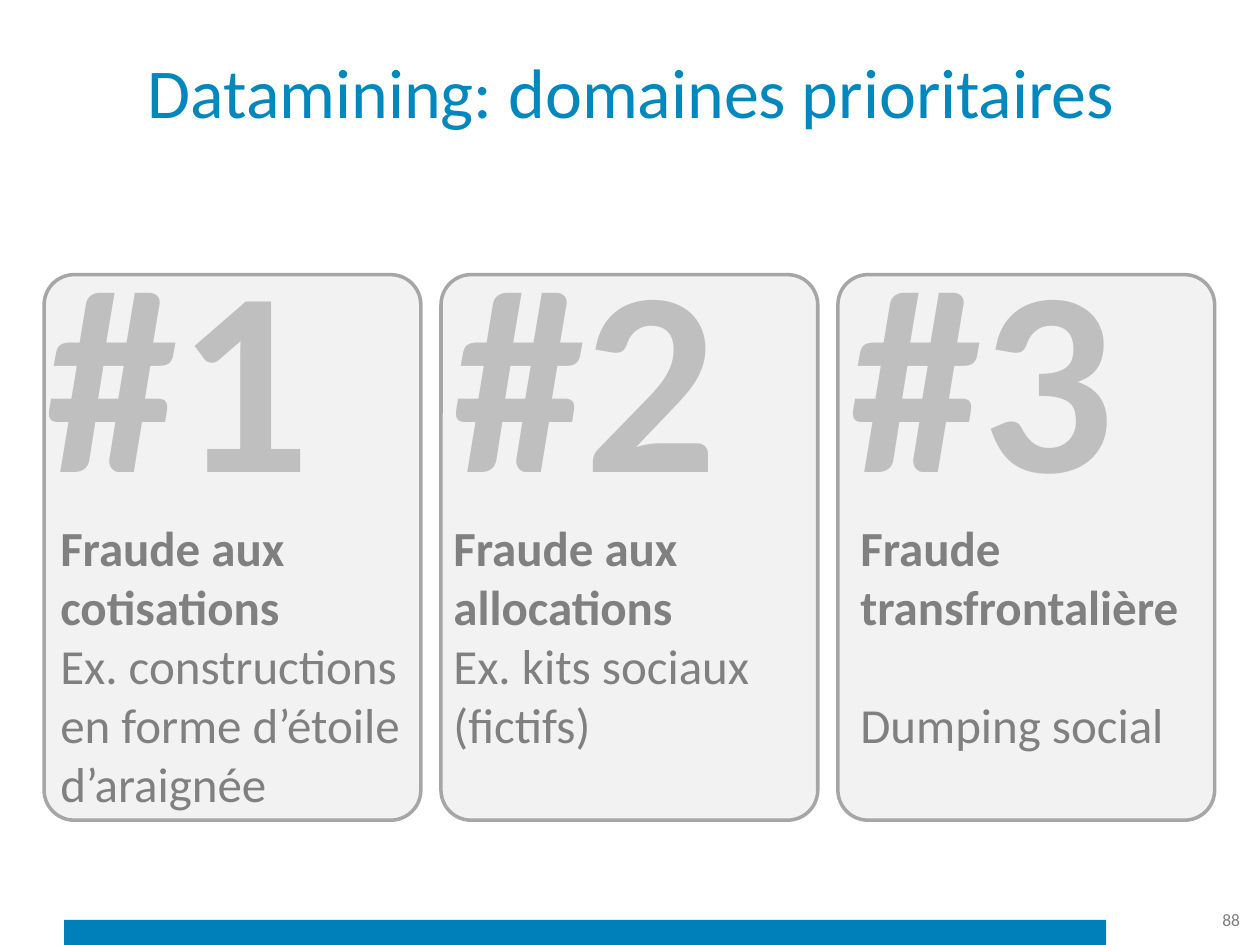
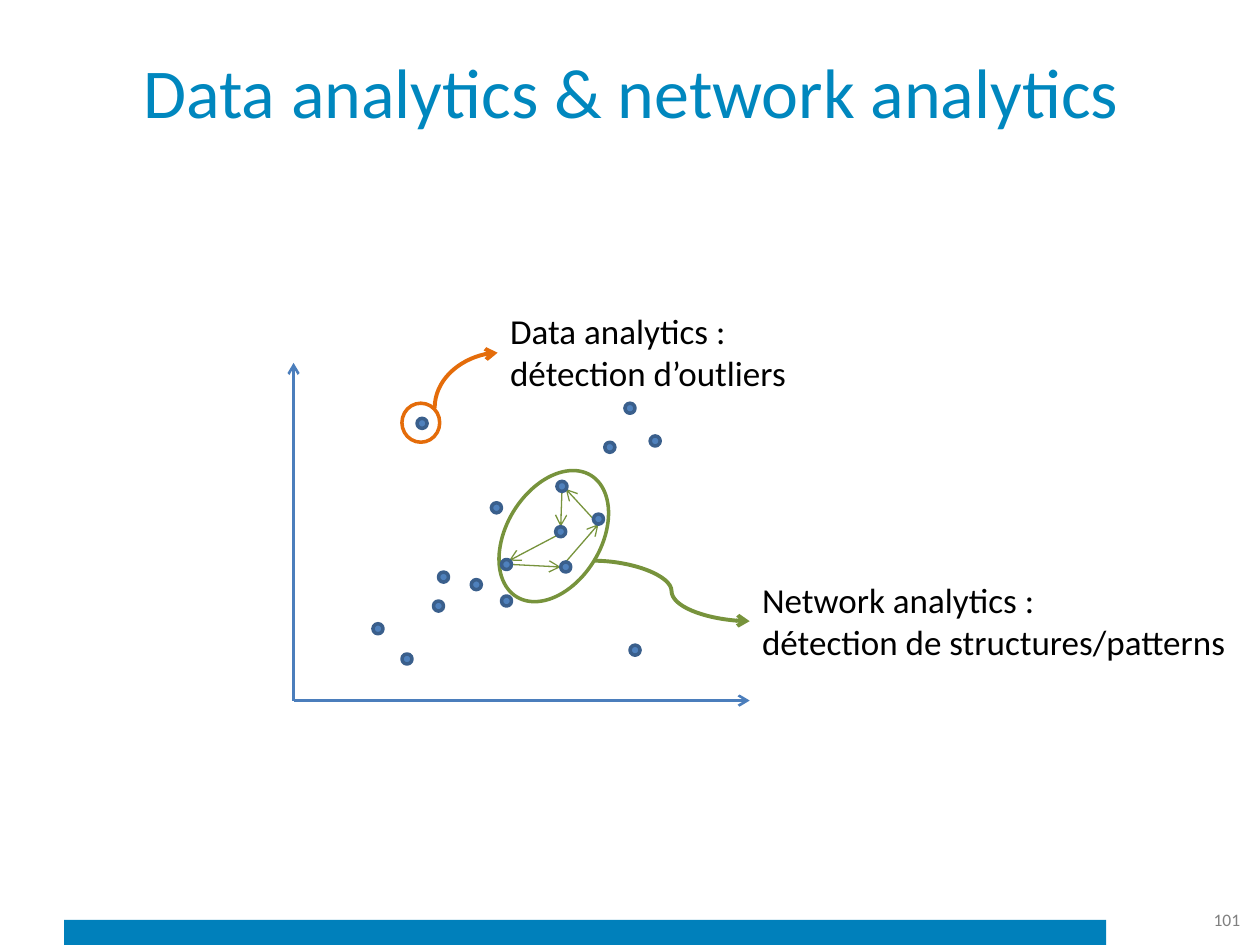
import pptx
import pptx.dml.color
import pptx.enum.shapes
import pptx.enum.text
import pptx.oxml
import pptx.oxml.ns
import pptx.util

Inches = pptx.util.Inches
Pt = pptx.util.Pt
Shape = pptx.enum.shapes.MSO_SHAPE
Connector = pptx.enum.shapes.MSO_CONNECTOR
Align = pptx.enum.text.PP_ALIGN
Anchor = pptx.enum.text.MSO_ANCHOR
AutoSize = pptx.enum.text.MSO_AUTO_SIZE

FONT = "Calibri"
BAND, TITLE, GREY = "0080BB", "0087BE", "808080"
CARD_FILL, CARD_LINE, NUMBER = "F2F2F2", "A6A6A6", "BFBFBF"
AXIS, DOT_FILL, DOT_LINE = "4B7EBC", "4F81BD", "3A5F8C"
ORANGE, GREEN, BLACK = "E46C0A", "77933C", "000000"


def color(value):
    """Turn a hex string into a colour."""
    return pptx.dml.color.RGBColor.from_string(value)


def write(frame, text, size=20, hue=BLACK, bold=False, align=Align.LEFT, before=0):
    """Append each line of text to the frame as a formatted paragraph."""
    for line in text.split("\n"):
        paragraph = frame.paragraphs[0] if not frame.text else frame.add_paragraph()
        paragraph.alignment = align
        if before:
            paragraph.space_before = Pt(before)
        run = paragraph.add_run()
        run.text = line
        run.font.name, run.font.size, run.font.bold = FONT, Pt(size), bold
        run.font.color.rgb = color(hue)


class Deck:
    """Hold the shared style and the slide being drawn."""

    def __init__(self):
        """Start an empty 4:3 presentation."""
        self.presentation = pptx.Presentation()
        self.presentation.slide_width = Inches(10)
        self.presentation.slide_height = Inches(7.5)
        self.slide = None

    def start(self, title, number):
        """Add a slide with its band, title and page number."""
        self.slide = self.presentation.slides.add_slide(self.presentation.slide_layouts[6])
        self.shape(Shape.RECTANGLE, 0.51, 7.3, 8.27, 0.2, fill=BAND)
        heading = self.box(0.51, 0.21, 9, 1.01, anchor=Anchor.MIDDLE)
        write(heading, title, size=40, hue=TITLE, align=Align.CENTER)
        page = self.box(9.12, 7.1, 0.82, 0.4, anchor=Anchor.MIDDLE)
        write(page, str(number), size=10, hue=GREY, align=Align.RIGHT)

    def box(self, left, top, width, height, wrap=True, anchor=Anchor.TOP):
        """Add a text box and return its text frame."""
        frame = self.slide.shapes.add_textbox(
            Inches(left), Inches(top), Inches(width), Inches(height)).text_frame
        frame.word_wrap = wrap
        frame.vertical_anchor = anchor
        frame.auto_size = AutoSize.NONE if wrap else AutoSize.SHAPE_TO_FIT_TEXT
        return frame

    def shape(self, kind, left, top, width, height, fill=None, line=None):
        """Add a preset shape with an optional fill and outline."""
        shape = self.slide.shapes.add_shape(
            kind, Inches(left), Inches(top), Inches(width), Inches(height))
        shape.shadow.inherit = False
        if fill:
            shape.fill.solid()
            shape.fill.fore_color.rgb = color(fill)
        else:
            shape.fill.background()
        if line:
            shape.line.color.rgb = color(line)
            shape.line.width = Pt(2)
        else:
            shape.line.fill.background()
        return shape

    def arrow(self, start, end, hue, width, kind=Connector.STRAIGHT):
        """Add a connector with an open arrowhead at its end."""
        arrow = self.slide.shapes.add_connector(
            kind, *(Inches(value) for value in (*start, *end)))
        arrow.line.color.rgb = color(hue)
        arrow.line.width = Pt(width)
        head = pptx.oxml.parse_xml(
            f'<a:tailEnd {pptx.oxml.ns.nsdecls("a")} type="arrow"/>')
        arrow.line._get_or_add_ln().append(head)
        arrow.element.spPr.append(
            pptx.oxml.parse_xml(f'<a:effectLst {pptx.oxml.ns.nsdecls("a")}/>'))
        return arrow

    def quarter_arrow(self, start, end, hue, width):
        """Add a curve that leaves upwards and arrives rightwards."""
        middle_x, middle_y = (start[0] + end[0]) / 2, (start[1] + end[1]) / 2
        half_run, half_rise = (end[0] - start[0]) / 2, (start[1] - end[1]) / 2
        arrow = self.arrow((middle_x + half_rise, middle_y + half_run),
                           (middle_x - half_rise, middle_y - half_run),
                           hue, width, Connector.CURVE)
        properties = arrow.element.spPr
        properties.find(pptx.oxml.ns.qn("a:prstGeom")).set("prst", "curvedConnector2")
        properties.find(pptx.oxml.ns.qn("a:xfrm")).set("rot", str(90 * 60000))


def draw_priorities(deck):
    """Draw the three priority domains as numbered cards."""
    deck.start("Datamining: domaines prioritaires", 88)
    domains = [
        (0.27, 0.38, 2.95, True, "Fraude aux\ncotisations",
         "Ex. constructions en forme d’étoile d’araignée", 0),
        (3.5, 3.5, 2.58, False, "Fraude aux\nallocations",
         "Ex. kits sociaux\n(fictifs)", 0),
        (6.65, 6.73, 2.92, True, "Fraude transfrontalière", "Dumping social", 34),
    ]
    for index, domain in enumerate(domains):
        number_left, text_left, text_width, wrap, name, example, gap = domain
        card = deck.shape(Shape.ROUNDED_RECTANGLE, 0.35 + 3.15 * index, 2.18, 2.99, 4.33,
                          fill=CARD_FILL, line=CARD_LINE)
        card.adjustments[0] = 0.08
        number = deck.box(number_left, 1.62, 2.32, 2.63, wrap=False)
        write(number, f"#{index + 1}", size=150, hue=NUMBER, bold=True)
        description = deck.box(text_left, 4.06, text_width, 2.46, wrap=wrap)
        write(description, name, size=28, hue=GREY, bold=True)
        write(description, example, size=28, hue=GREY, before=gap)


def draw_analytics(deck):
    """Draw the scatter with its outlier and its network."""
    deck.start("Data analytics & network analytics", 101)
    origin = (2.33, 5.56)
    for axis_end in [(2.33, 2.88), (5.95, 5.56)]:
        deck.arrow(origin, axis_end, AXIS, 1.5)

    deck.shape(Shape.OVAL, 3.19, 3.2, 0.3, 0.31, line=ORANGE)
    write(deck.box(3.95, 2.41, 2.48, 0.77, wrap=False),
          "Data analytics :\ndétection d’outliers")
    deck.quarter_arrow((3.45, 3.24), (3.95, 2.8), ORANGE, 2.25)

    network_links = [
        ((4.71, 4.12), (4.49, 3.88)),
        ((4.06, 4.48), (4.45, 4.5)),
        ((4.49, 4.46), (4.75, 4.16)),
        ((4.46, 3.9), (4.45, 4.18)),
        ((4.42, 4.25), (4.04, 4.45)),
    ]
    for start, end in network_links:
        deck.arrow(start, end, GREEN, 0.75)
    network = deck.shape(Shape.OVAL, 4.02, 3.69, 0.75, 1.13, line=GREEN)
    network.rotation = 31.4
    write(deck.box(5.95, 4.54, 3.93, 0.77, wrap=False),
          "Network analytics :\ndétection de structures/patterns")
    deck.arrow((4.71, 4.45), (5.95, 4.93), GREEN, 2.25, Connector.CURVE)

    observations = [
        (2.96, 4.95), (3.48, 4.54), (3.19, 5.19), (3.44, 4.77), (3.98, 4.73), (3.74, 4.6),
        (3.9, 3.99), (4.96, 3.2), (5, 5.12), (3.31, 3.32), (4.8, 3.51), (4.71, 4.08),
        (5.16, 3.46), (3.98, 4.44), (4.45, 4.46), (4.41, 4.18), (4.42, 3.82),
    ]
    for left, top in observations:
        deck.shape(Shape.OVAL, left, top, 0.08, 0.08, fill=DOT_FILL, line=DOT_LINE)


def main():
    """Build both slides and save them."""
    deck = Deck()
    draw_priorities(deck)
    draw_analytics(deck)
    deck.presentation.save("out.pptx")


if __name__ == "__main__":
    main()
